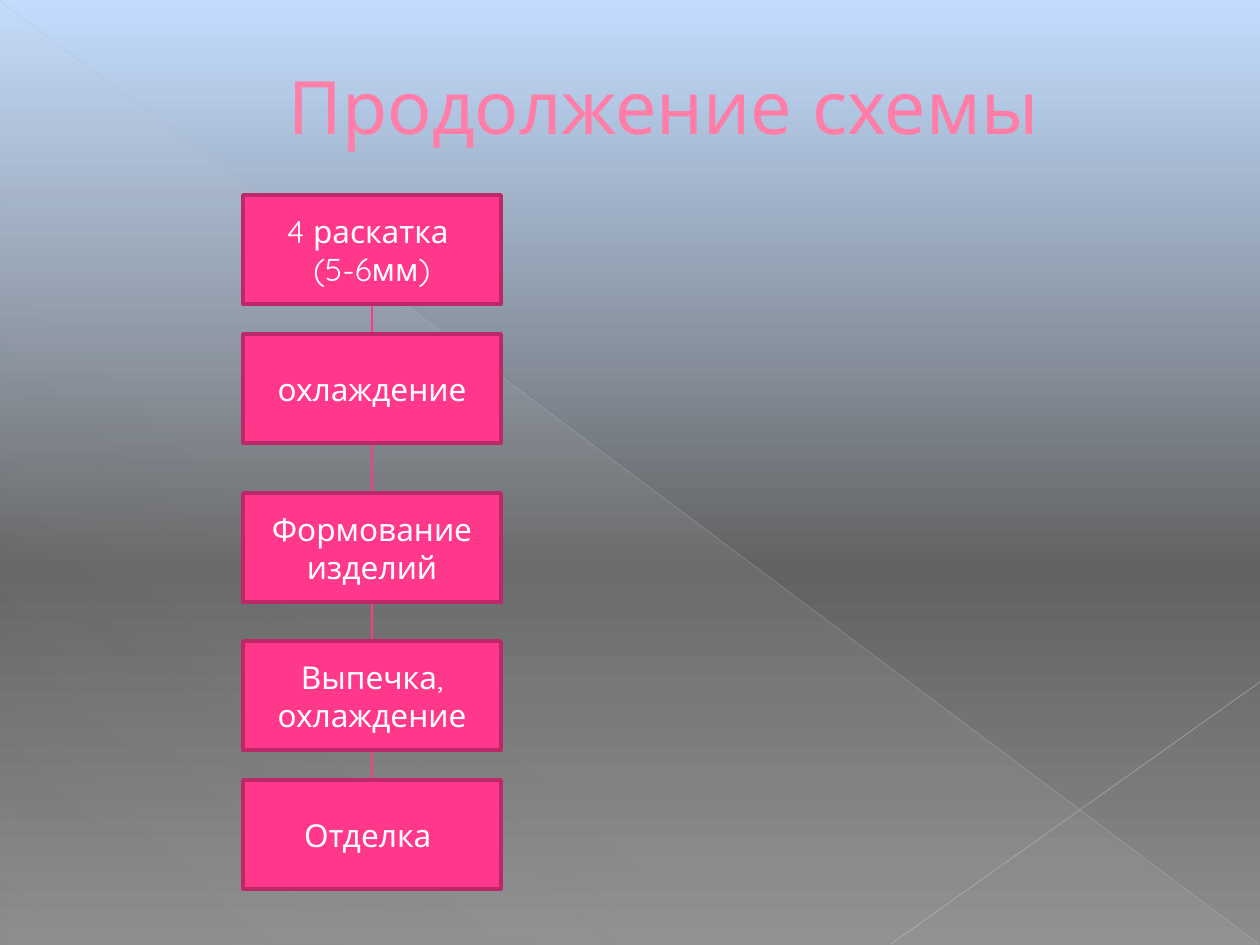
import pptx
import pptx.util
import pptx.dml.color
import pptx.enum.shapes
import pptx.enum.text
import pptx.oxml
import pptx.oxml.ns

PX = 914400 / 126
FONT = "Quicksand"
qn = pptx.oxml.ns.qn


def hue(code):
    return pptx.dml.color.RGBColor.from_string(code)


def blend(item, angle, stops):
    """Swap the first solid fill of item for a gradient."""
    gs = "".join(
        f'<a:gs pos="{pos * 1000}"><a:srgbClr val="{hue(code)}">'
        f'<a:alpha val="{alpha * 1000}"/></a:srgbClr></a:gs>'
        for pos, code, alpha in stops)
    grad = pptx.oxml.parse_xml(
        f'<a:gradFill {pptx.oxml.ns.nsdecls("a")}><a:gsLst>{gs}</a:gsLst>'
        f'<a:lin ang="{angle * 60000}" scaled="0"/></a:gradFill>')
    solid = item.element.xpath(".//a:solidFill")[0]
    solid.getparent().replace(solid, grad)


deck = pptx.Presentation()
deck.slide_width = round(1260 * PX)
deck.slide_height = round(945 * PX)
slide = deck.slides.add_slide(deck.slide_layouts[5])
shapes = slide.shapes

# Background
slide.background.fill.solid()
slide.background.fill.fore_color.rgb = hue("8C8C8C")
blend(slide, 90, [(0, "C3DDFF", 100), (60, "626262", 100),
                  (100, "8C8C8C", 100)])

# Pale corner triangle
wedge = shapes.add_shape(pptx.enum.shapes.MSO_SHAPE.RIGHT_TRIANGLE,
                         *[round(n * PX) for n in (1, 2, 1259, 943)])
wedge.shadow.inherit = False
wedge.line.fill.background()
wedge.fill.solid()
wedge.fill.fore_color.rgb = hue("D2D2D2")
blend(wedge, 133, [(0, "D2D2D2", 10), (70, "D2D2D2", 8),
                   (100, "D2D2D2", 1)])

# Steps of the scheme
steps = [(195, "4 раскатка \n(5-6мм)"), (334, "охлаждение"),
         (493, "Формование изделий"), (641, "Выпечка, охлаждение"),
         (780, "Отделка ")]
left, wide, high = 243, 258, 109
mid = left + wide // 2

# Lines: ends, colour, width, opacity
lines = [((0, 1, 1259, 944), "BFBFBF", 0.39, 35),
         ((1260, 682, 891, 944), "C6C6C6", 0.47, 45)]
for (top, _), (next_top, _) in zip(steps, steps[1:]):
    lines.append(((mid, top + high, mid, next_top), "FF388C", 0.75, 100))

for ends, code, width, alpha in lines:
    line = shapes.add_connector(pptx.enum.shapes.MSO_CONNECTOR.STRAIGHT,
                                *[round(n * PX) for n in ends])
    line.line.color.rgb = hue(code)
    line.line.width = pptx.util.Pt(width)
    tint = line.element.xpath(".//a:srgbClr")[0]
    tint.append(tint.makeelement(qn("a:alpha"), {"val": str(alpha * 1000)}))
    props = line.element.spPr
    props.append(props.makeelement(qn("a:effectLst"), {}))

# Title, brought in front of the backdrop
title = shapes.title
shapes.element.append(title.element)
title.left, title.top, title.width, title.height = [
    round(n * PX) for n in (63, 37, 1134, 137)]
title.text_frame.text = "Продолжение схемы"
title.text_frame.vertical_anchor = pptx.enum.text.MSO_ANCHOR.MIDDLE
para = title.text_frame.paragraphs[0]
para.alignment = pptx.enum.text.PP_ALIGN.CENTER
para._p.get_or_add_pPr().set("marL", str(round(67 * PX)))
font = para.runs[0].font
font.name = FONT
font.size = pptx.util.Pt(42)
font.color.rgb = hue("FF7DA7")

# Step boxes
for top, text in steps:
    box = shapes.add_shape(pptx.enum.shapes.MSO_SHAPE.RECTANGLE,
                           *[round(n * PX) for n in (left, top, wide, high)])
    box.shadow.inherit = False
    box.fill.solid()
    box.fill.fore_color.rgb = hue("FF388C")
    box.line.color.rgb = hue("BD2968")
    box.line.width = pptx.util.Pt(2)
    box.text_frame.text = text
    box.text_frame.word_wrap = True
    box.text_frame.vertical_anchor = pptx.enum.text.MSO_ANCHOR.MIDDLE
    for para in box.text_frame.paragraphs:
        para.alignment = pptx.enum.text.PP_ALIGN.CENTER
        font = para.runs[0].font
        font.name = FONT
        font.size = pptx.util.Pt(18)
        font.color.rgb = hue("FFFFFF")

deck.save("out.pptx")
